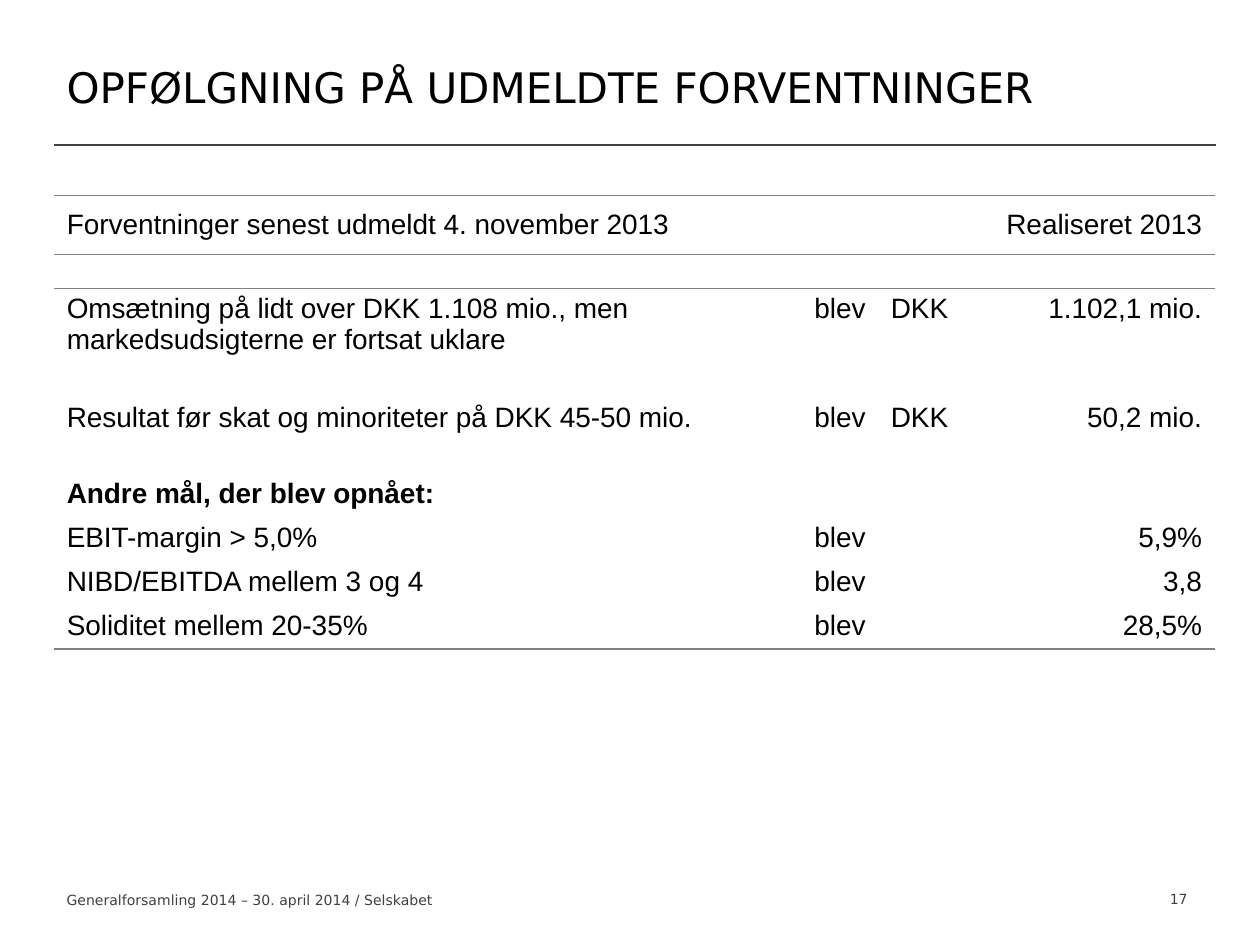
"""Build the slide that follows up on the announced expectations."""
from lxml import etree
from pptx import Presentation
from pptx.dml.color import RGBColor
from pptx.enum.shapes import MSO_CONNECTOR
from pptx.enum.text import MSO_ANCHOR, PP_ALIGN
from pptx.oxml.ns import qn
from pptx.util import Inches, Pt

LEFT, MID, RIGHT = PP_ALIGN.LEFT, PP_ALIGN.CENTER, PP_ALIGN.RIGHT
TOP, CENTRE = MSO_ANCHOR.TOP, MSO_ANCHOR.MIDDLE
LINE = MSO_CONNECTOR.STRAIGHT
PLAIN = "{2D5ABB26-0587-4C30-8999-92F81FD0307C}"
EDGE = 0.43


def hue(code):
    """Return the colour for a hex string."""
    return RGBColor.from_string(code)


def write(para, text, size, face, code, align=LEFT, bold=False):
    """Put one styled run into a paragraph."""
    para.alignment = align
    run = para.add_run()
    run.text = text
    form = {"size": Pt(size), "name": face, "bold": bold}
    for key, val in form.items():
        setattr(run.font, key, val)
    run.font.color.rgb = hue(code)


deck = Presentation()
deck.slide_width, deck.slide_height = Inches(10), Inches(7.5)
slide = deck.slides.add_slide(deck.slide_layouts[6])

rule = slide.shapes.add_connector(
    LINE, Inches(EDGE), Inches(1.15), Inches(9.65), Inches(1.15))
rule.line.color.rgb = hue("404040")
rule.line.width = Pt(1.25)
etree.SubElement(rule._element.spPr, qn("a:effectLst"))

texts = [
    ("17", (8.94, 7.02, 0.83, 0.23), 8, "404040", MID, TOP),
    ("Generalforsamling 2014 – 30. april 2014 / Selskabet",
     (EDGE, 7.03, 4.02, 0.24), 8, "404040", LEFT, TOP),
    ("OPFØLGNING PÅ UDMELDTE FORVENTNINGER",
     (EDGE, 0.22, 8.58, 0.93), 24, "000000", LEFT, CENTRE),
]
for text, place, size, code, align, anchor in texts:
    frame = slide.shapes.add_textbox(*map(Inches, place)).text_frame
    frame.word_wrap = True
    frame.vertical_anchor = anchor
    write(frame.paragraphs[0], text, size, "DejaVu Sans", code, align)

gap = ("", "", "", "")
data = [
    ("Forventninger senest udmeldt 4. november 2013", "Realiseret 2013", "", ""),
    gap,
    ("Omsætning på lidt over DKK 1.108 mio., men markedsudsigterne er fortsat uklare",
     "blev", "DKK", "1.102,1 mio."),
    gap,
    ("Resultat før skat og minoriteter på DKK 45-50 mio.", "blev", "DKK", "50,2 mio."),
    gap,
    ("Andre mål, der blev opnået:", "", "", ""),
    ("EBIT-margin > 5,0%", "blev", "", "5,9%"),
    ("NIBD/EBITDA mellem 3 og 4", "blev", "", "3,8"),
    ("Soliditet mellem 20-35%", "blev", "", "28,5%"),
]
wide = [5.91, 0.63, 0.94, 1.73]
high = [0.47, 0.27, 0.6, 0.25, 0.35, 0.25, 0.35, 0.35, 0.35, 0.35]
sides = [LEFT, RIGHT, LEFT, RIGHT]
edges = {0: ("lnT", "lnB"), 1: ("lnT",), len(data) - 1: ("lnB",)}

grid = slide.shapes.add_table(
    len(data), len(wide), Inches(EDGE), Inches(1.55),
    Inches(sum(wide)), Inches(sum(high))).table
grid.first_row = grid.horz_banding = False
grid._tbl.tblPr.find(qn("a:tableStyleId")).text = PLAIN
for col, size in zip(grid.columns, wide):
    col.width = Inches(size)
for row, size in zip(grid.rows, high):
    row.height = Inches(size)
grid.cell(0, 1).merge(grid.cell(0, 3))

pad = {"margin_left": 0.1, "margin_right": 0.1,
       "margin_top": 0.04, "margin_bottom": 0.04}
for r, row in enumerate(data):
    for c, text in enumerate(row):
        cell = grid.cell(r, c)
        for key, val in pad.items():
            setattr(cell, key, Inches(val))
        cell.vertical_anchor = TOP if r else CENTRE
        para = cell.text_frame.paragraphs[0]
        if text:
            bold = text.startswith("Andre")
            write(para, text, 16, "Arial", "000000", sides[c], bold)
        else:
            etree.SubElement(para._p, qn("a:endParaRPr"), sz="1000")
        for name in edges.get(r, ()):
            edge = etree.SubElement(
                cell._tc.get_or_add_tcPr(), qn("a:" + name), w=str(Pt(1)))
            fill = etree.SubElement(edge, qn("a:solidFill"))
            etree.SubElement(fill, qn("a:srgbClr"), val="808080")
        cell.fill.background()

deck.save("out.pptx")
